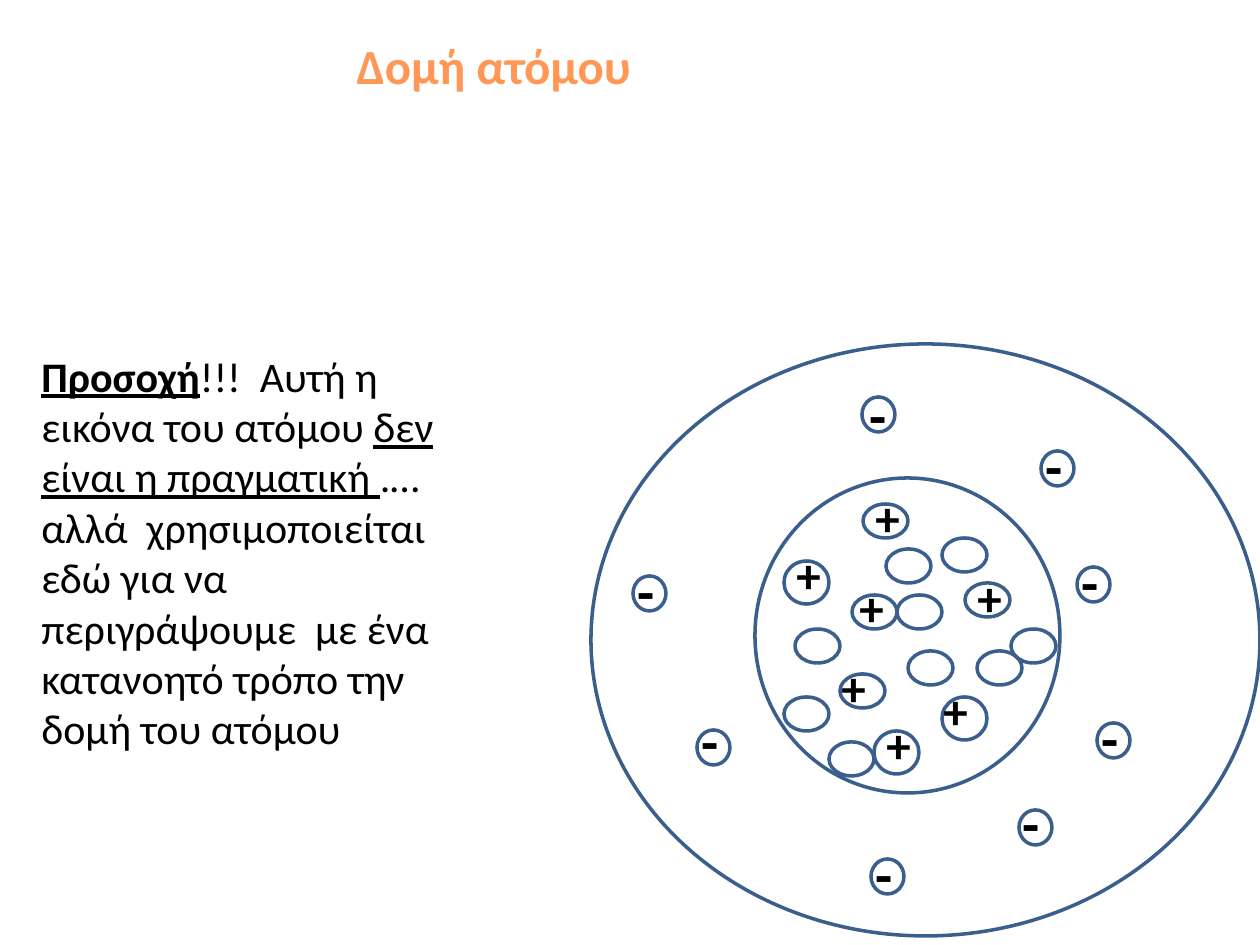
from pptx import Presentation
from pptx.dml.color import RGBColor
from pptx.enum.shapes import MSO_SHAPE as Shape
from pptx.enum.text import MSO_ANCHOR as Anchor, PP_ALIGN as Align
from pptx.util import Pt

PX = 914400 // 126
FONT, BLACK, ORANGE, BLUE = "Calibri", "000000", "FF9856", "3A5F8C"


def add_run(paragraph, text, size, color=BLACK, bold=False, underline=False):
    run = paragraph.add_run()
    run.text = text
    run.font.name, run.font.size = FONT, Pt(size)
    run.font.bold, run.font.underline = bold, underline
    run.font.color.rgb = RGBColor.from_string(color)


def add_ring(x, y, w, h):
    ring = atom.shapes.add_shape(Shape.OVAL, x * PX, y * PX, w * PX, h * PX)
    ring.shadow.inherit = False
    ring.fill.background()
    ring.line.color.rgb = RGBColor.from_string(BLUE)
    ring.line.width = Pt(2)


prs = Presentation()
prs.slide_width, prs.slide_height = 1260 * PX, 945 * PX
slide = prs.slides.add_slide(prs.slide_layouts[5])

# Title
title = slide.shapes.title
title.left, title.top, title.width, title.height = 344 * PX, 29 * PX, 718 * PX, 72 * PX
title.text_frame.vertical_anchor = Anchor.TOP
heading = title.text_frame.paragraphs[0]
heading.alignment = Align.LEFT
add_run(heading, "Δομή ατόμου", 28, ORANGE, bold=True)

# Warning about the model
warning = slide.shapes.add_textbox(29 * PX, 344 * PX, 452 * PX, 420 * PX)
warning.text_frame.word_wrap = True
sentence = warning.text_frame.paragraphs[0]
add_run(sentence, "Προσοχή", 24, bold=True, underline=True)
add_run(sentence, "!!!  Αυτή η εικόνα του ατόμου ", 24)
add_run(sentence, "δεν είναι η πραγματική ", 24, underline=True)
add_run(sentence, ".…αλλά  χρησιμοποιείται εδώ για να περιγράψουμε  με ένα "
                  "κατανοητό τρόπο την δομή του ατόμου", 24)

# Nucleus and outer boundary of the atom
atom = slide.shapes.add_group_shape()
add_ring(755, 478, 305, 315)
add_ring(591, 344, 669, 592)

# Neutrons: x, y
for x, y in [(942, 538), (977, 651), (886, 549), (795, 629), (897, 595),
             (784, 697), (1011, 629), (829, 742), (908, 651)]:
    add_ring(x, y, 45, 34)

# Charged particles: x, y, height, then offset of the sign
protons = [(874, 731, 43, 0, -23), (784, 561, 43, 0, -23), (942, 697, 43, -11, -23),
           (965, 583, 34, 0, -22), (840, 674, 34, -11, -23), (852, 595, 34, -5, -24),
           (863, 504, 34, 0, -23)]
electrons = [(1077, 567, 35, -8, -26), (697, 730, 35, -8, -30), (862, 397, 35, -5, -23),
             (1019, 810, 35, -9, -28), (1097, 723, 35, -8, -26), (633, 576, 35, -8, -26),
             (1041, 451, 35, -8, -26), (871, 859, 35, -8, -26)]
for particles, width, sign, size, sign_w, sign_h in [(protons, 45, "+", 28, 45, 66),
                                                     (electrons, 33, "-", 32, 42, 73)]:
    for x, y, height, dx, dy in particles:
        add_ring(x, y, width, height)
        charge = atom.shapes.add_textbox((x + dx) * PX, (y + dy) * PX, sign_w * PX, sign_h * PX)
        charge.text_frame.word_wrap = True
        add_run(charge.text_frame.paragraphs[0], sign, size, bold=True)

prs.save("out.pptx")
